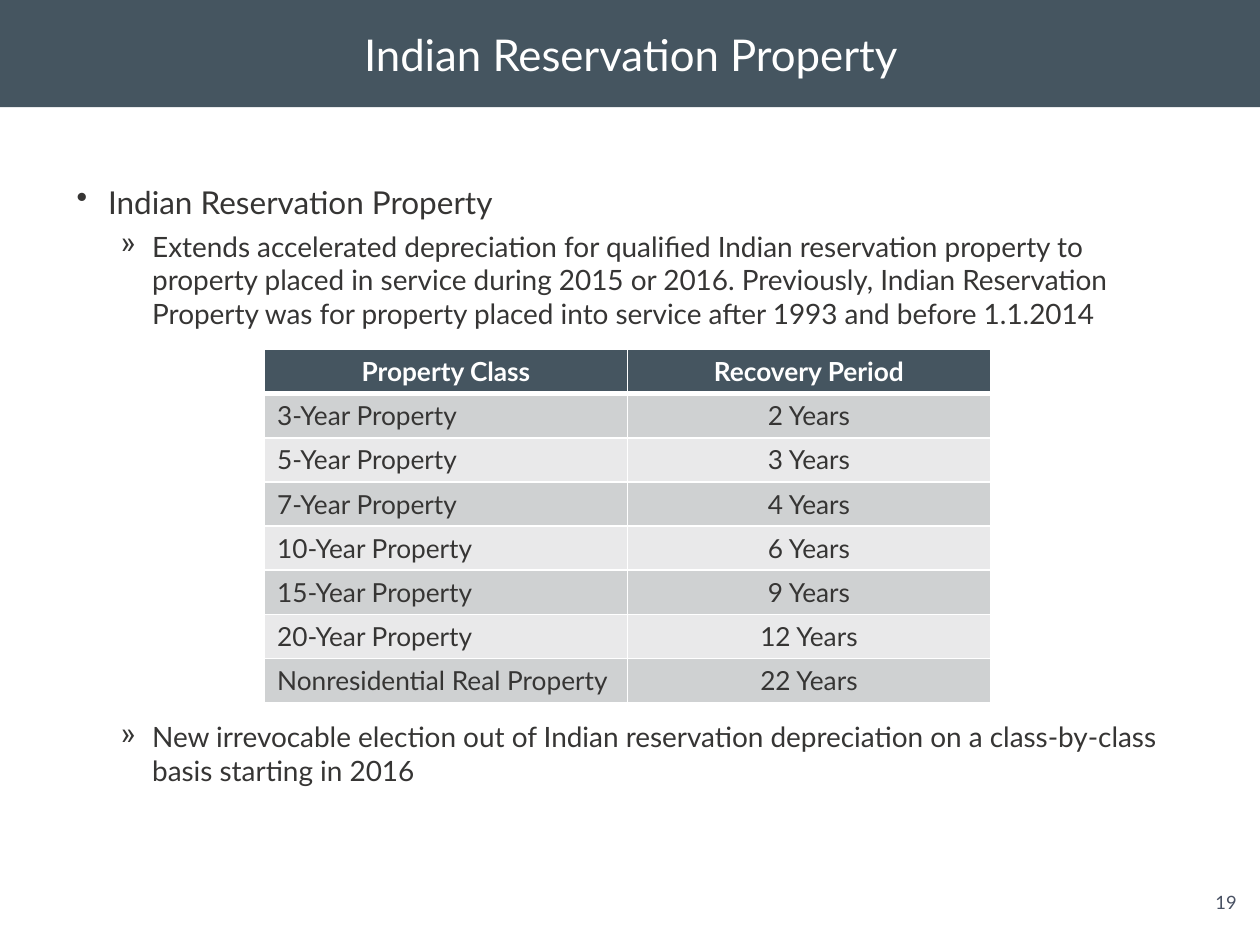
from lxml import etree
from pptx import Presentation
from pptx.dml.color import RGBColor
from pptx.enum.shapes import MSO_SHAPE
from pptx.enum.text import MSO_ANCHOR, PP_ALIGN
from pptx.oxml.ns import qn
from pptx.util import Pt

RECT = MSO_SHAPE.RECTANGLE
LEFT, CENTER = PP_ALIGN.LEFT, PP_ALIGN.CENTER
MIDDLE = MSO_ANCHOR.MIDDLE
FONT = "Lato"
COLORS = {
    "slate": "455560",
    "white": "FFFFFF",
    "text": "363534",
    "number": "495163",
    "dark": "CFD1D2",
    "light": "E9E9EA",
}
ROWS = [
    ("Property Class", "Recovery Period"),
    ("3-Year Property", "2 Years"),
    ("5-Year Property", "3 Years"),
    ("7-Year Property", "4 Years"),
    ("10-Year Property", "6 Years"),
    ("15-Year Property", "9 Years"),
    ("20-Year Property", "12 Years"),
    ("Nonresidential Real Property", "22 Years"),
]
POINTS = [
    ("Indian Reservation Property", 0, 18, 0),
    ("Extends accelerated depreciation for qualified Indian reservation "
     "property to property placed in service during 2015 or 2016. "
     "Previously, Indian Reservation Property was for property placed into "
     "service after 1993 and before 1.1.2014", 1, 16, 5),
    ("New irrevocable election out of Indian reservation depreciation on a "
     "class-by-class basis starting in 2016", 1, 16, 222.8),
]
LEVELS = [("•", 18), ("»", 43.2)]


def rgb(name):
    """Return the named colour."""
    return RGBColor.from_string(COLORS[name])


def style(para, size, color, align=LEFT, bold=False):
    """Format a paragraph and its runs."""
    para.alignment = align
    for run in para.runs:
        font = run.font
        font.name, font.size, font.bold = FONT, Pt(size), bold
        font.color.rgb = rgb(color)


def add_bar(slide, left, top, width, height, color):
    """Add a plain filled rectangle."""
    bar = slide.shapes.add_shape(
        RECT, Pt(left), Pt(top), Pt(width), Pt(height))
    bar.shadow.inherit = False
    bar.fill.solid()
    bar.fill.fore_color.rgb = rgb(color)
    bar.line.fill.background()


def add_box(slide, left, top, width, height, wrap=True):
    """Add a text box and return its frame."""
    box = slide.shapes.add_textbox(
        Pt(left), Pt(top), Pt(width), Pt(height))
    box.text_frame.word_wrap = wrap
    return box.text_frame


def add_title(slide, text):
    """Add the centred slide title."""
    frame = add_box(slide, 36.7, 0, 647.3, 61.2)
    frame.vertical_anchor = MIDDLE
    frame.text = text
    style(frame.paragraphs[0], 25, "white", CENTER)


def add_number(slide, text):
    """Add the page number."""
    frame = add_box(slide, 694.1, 509, 13, 13, wrap=False)
    frame.margin_left = frame.margin_right = 0
    frame.margin_top = frame.margin_bottom = 0
    frame.text = text
    style(frame.paragraphs[0], 10.5, "number", CENTER)


def add_bullet(para, level):
    """Give a paragraph the bullet and indent of its level."""
    char, indent = LEVELS[level]
    para.level = level
    props = para._p.get_or_add_pPr()
    props.set("marL", str(Pt(indent)))
    props.set("indent", str(Pt(-18)))
    etree.SubElement(props, qn("a:buChar"), char=char)


def add_points(slide, points):
    """Add the bulleted body text."""
    frame = add_box(slide, 36.7, 100.8, 650.2, 375.1)
    frame.text = "\n".join(point[0] for point in points)
    for para, (_, level, size, gap) in zip(frame.paragraphs, points):
        add_bullet(para, level)
        para.space_before = Pt(gap)
        style(para, size, "text")


def add_border(cell, bottom):
    """Draw white lines around a cell."""
    props = cell._tc.get_or_add_tcPr()
    for side, width in (("L", 1), ("R", 1), ("T", 1), ("B", bottom)):
        line = etree.SubElement(props, qn(f"a:ln{side}"), w=str(Pt(width)))
        fill = etree.SubElement(line, qn("a:solidFill"))
        etree.SubElement(fill, qn("a:srgbClr"), val=COLORS["white"])


def add_grid(slide, rows):
    """Add the table of recovery periods."""
    table = slide.shapes.add_table(
        len(rows), 2, Pt(151.2), Pt(199.7), Pt(414.8), Pt(201.6)).table
    for i, row in enumerate(rows):
        head = i == 0
        band = "slate" if head else ("dark" if i % 2 else "light")
        for j, text in enumerate(row):
            cell = table.cell(i, j)
            add_border(cell, 3 if head else 1)
            cell.fill.solid()
            cell.fill.fore_color.rgb = rgb(band)
            cell.text_frame.text = text
            style(cell.text_frame.paragraphs[0], 15,
                  "white" if head else "text",
                  CENTER if head or j else LEFT, head)


def main():
    """Build and save the slide."""
    deck = Presentation()
    deck.slide_width, deck.slide_height = Pt(720), Pt(540)
    slide = deck.slides.add_slide(deck.slide_layouts[6])
    add_bar(slide, 0, 0, 720, 61.2, "slate")
    add_number(slide, "19")
    add_title(slide, "Indian Reservation Property")
    add_points(slide, POINTS)
    add_grid(slide, ROWS)
    deck.save("out.pptx")


if __name__ == "__main__":
    main()
